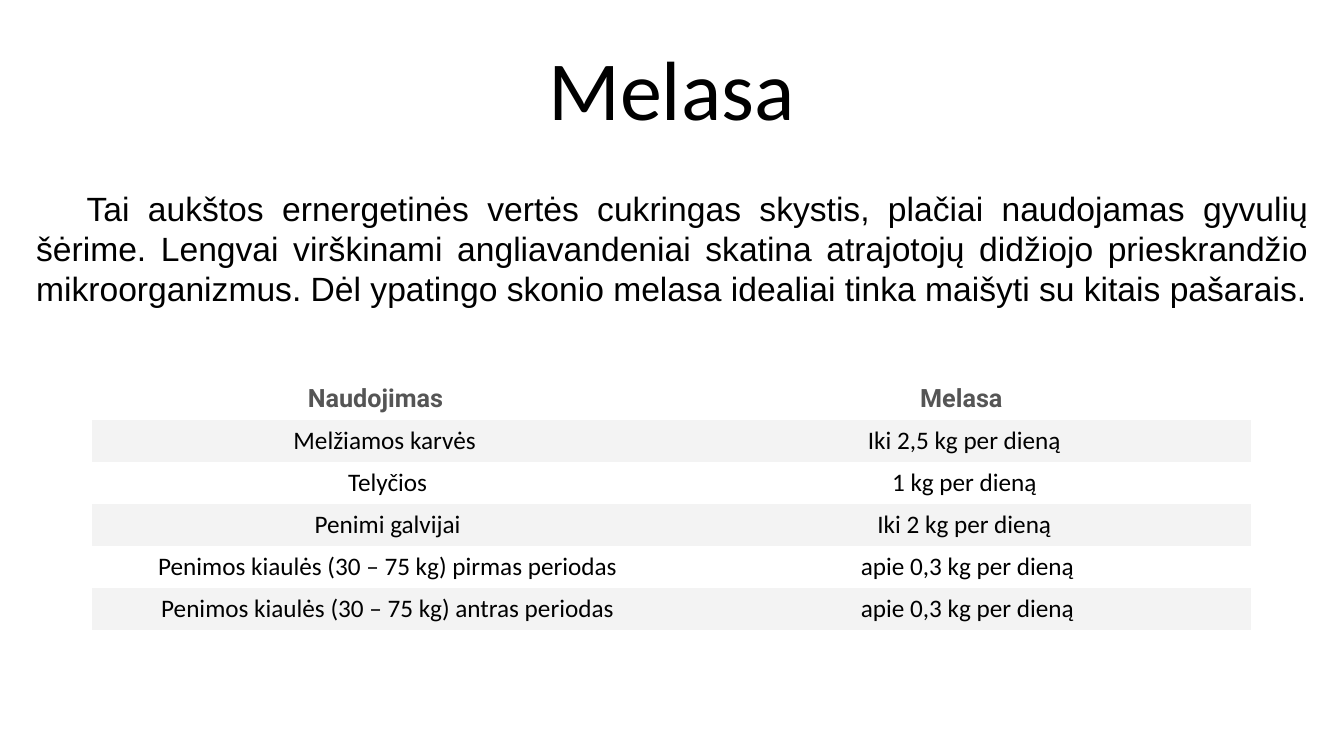
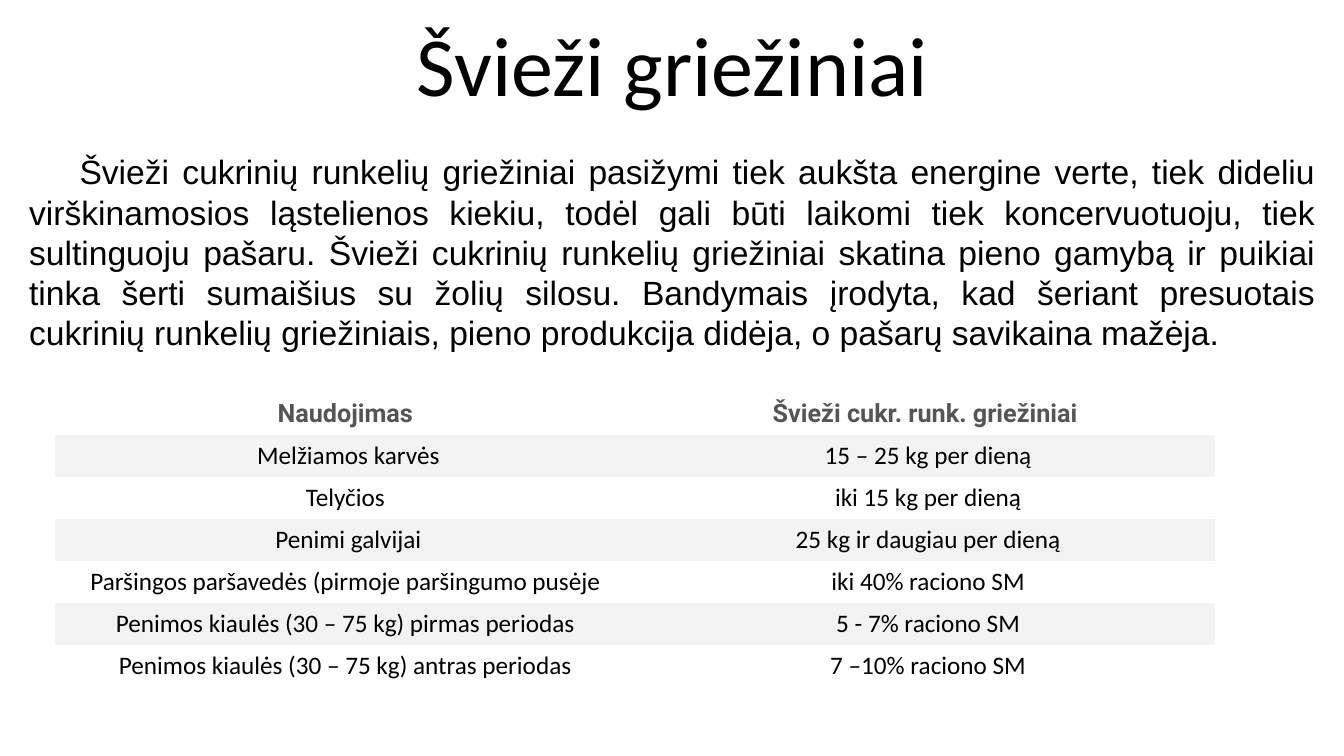
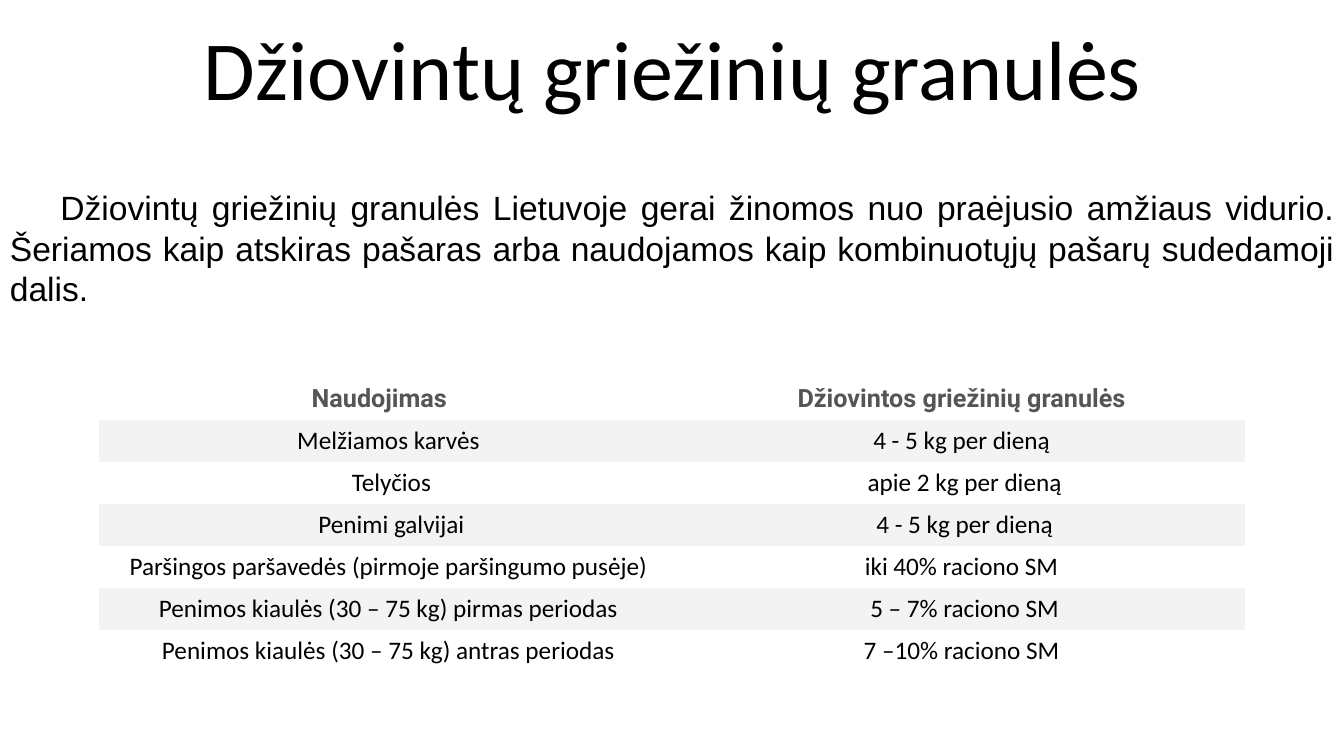
from pptx import Presentation
from pptx.dml.color import RGBColor
from pptx.enum.text import MSO_ANCHOR, PP_ALIGN
from pptx.oxml.ns import qn
from pptx.util import Inches, Pt

COLORS = {"text": "000000", "heading": "555555", "band": "F3F3F3", "plain": "FFFFFF"}
NO_GRID_STYLE = "{2D5ABB26-0587-4C30-8999-92F81FD0307C}"
ROW_HEIGHT = 2.5 / 6
INDENT_STEP = 0.06

FONTS = {
    "title": {"name": "Calibri", "size": Pt(60), "bold": False, "color": "text"},
    "body": {"name": "Arial", "size": Pt(24), "bold": False, "color": "text"},
    "heading": {"name": "Roboto", "size": Pt(18), "bold": True, "color": "heading"},
    "cell": {"name": "Calibri", "size": Pt(18), "bold": False, "color": "text"},
}
PARAGRAPHS = {
    "title": {"alignment": PP_ALIGN.CENTER, "line_spacing": 0.9},
    "body": {"alignment": PP_ALIGN.JUSTIFY, "line_spacing": 1.0, "space_before": Pt(10)},
    "heading": {"alignment": PP_ALIGN.CENTER},
    "cell": {"alignment": PP_ALIGN.CENTER},
}
ROOMY = {"margin_left": 0.08, "margin_right": 0.08, "margin_top": 0.05, "margin_bottom": 0.05}
TIGHT = dict.fromkeys(ROOMY, 0.01)

COWS, HEIFERS, CATTLE = "Melžiamos karvės", "Telyčios", "Penimi galvijai"
SOWS = "Paršingos paršavedės (pirmoje paršingumo pusėje"
PIGS_FIRST = "Penimos kiaulės (30 – 75 kg) pirmas periodas"
PIGS_SECOND = "Penimos kiaulės (30 – 75 kg) antras periodas"

FEEDS = [
    {
        "title": "Melasa",
        "title_box": (1.66, 0.31, 10, 1.11),
        "body": "Tai aukštos ernergetinės vertės cukringas skystis, plačiai naudojamas gyvulių "
                "šėrime. Lengvai virškinami angliavandeniai skatina atrajotojų didžiojo "
                "prieskrandžio mikroorganizmus. Dėl ypatingo skonio melasa idealiai tinka "
                "maišyti su kitais pašarais.",
        "body_box": (0.26, 1.81, 12.81, 3.69),
        "table_box": (0.91, 3.75, 11.5),
        "margins": ROOMY,
        "rows": [
            ("Naudojimas", "Melasa"),
            (COWS, "Iki 2,5 kg per dieną"),
            (HEIFERS, "1 kg per dieną"),
            (CATTLE, "Iki 2 kg per dieną"),
            (PIGS_FIRST, "apie 0,3 kg per dieną"),
            (PIGS_SECOND, "apie 0,3 kg per dieną"),
        ],
        "indents": [(-2, 0), (1, 1), (2, 1), (2, 1), (2, 2), (2, 2)],
    },
    {
        "title": "Švieži griežiniai",
        "title_box": (1.67, 0.2, 10, 0.99),
        "body": "Švieži cukrinių runkelių griežiniai pasižymi tiek aukšta energine verte, tiek "
                "dideliu virškinamosios ląstelienos kiekiu, todėl gali būti laikomi tiek "
                "koncervuotuoju, tiek sultinguoju pašaru. Švieži cukrinių runkelių griežiniai "
                "skatina pieno gamybą ir puikiai tinka šerti sumaišius su žolių silosu. "
                "Bandymais įrodyta, kad šeriant presuotais cukrinių runkelių griežiniais, "
                "pieno produkcija didėja, o pašarų savikaina mažėja.",
        "body_box": (0.19, 1.45, 12.95, 2.96),
        "table_box": (0.55, 3.9, 11.5),
        "margins": TIGHT,
        "rows": [
            ("Naudojimas", "Švieži cukr. runk. griežiniai"),
            (COWS, "15 – 25 kg per dieną"),
            (HEIFERS, "iki 15 kg per dieną"),
            (CATTLE, "25 kg ir daugiau per dieną"),
            (SOWS, "iki 40% raciono SM"),
            (PIGS_FIRST, "5 - 7% raciono SM"),
            (PIGS_SECOND, "7 –10% raciono SM"),
        ],
        "indents": [(0, 0), (1, 1), (0, 1), (1, 1), (0, 1), (0, 1), (0, 1)],
    },
    {
        "title": "Džiovintų griežinių granulės",
        "title_box": (1.67, 0.2, 10, 1.03),
        "body": "Džiovintų griežinių granulės Lietuvoje gerai žinomos nuo praėjusio amžiaus "
                "vidurio. Šeriamos kaip atskiras pašaras arba naudojamos kaip kombinuotųjų "
                "pašarų sudedamoji dalis.",
        "body_box": (0, 1.81, 13.33, 1.16),
        "table_box": (0.98, 3.75, 11.37),
        "margins": ROOMY,
        "rows": [
            ("Naudojimas", "Džiovintos griežinių granulės"),
            (COWS, "4 - 5 kg per dieną"),
            (HEIFERS, "apie 2 kg per dieną"),
            (CATTLE, "4 - 5 kg per dieną"),
            (SOWS + ")", "iki 40% raciono SM"),
            (PIGS_FIRST, "5 – 7% raciono SM"),
            (PIGS_SECOND, "7 –10% raciono SM"),
        ],
        "indents": [(-2, 1), (1, 1), (2, 2), (2, 2), (1, 1), (1, 2), (1, 1)],
    },
]


def color(name):
    """Return the named colour."""
    return RGBColor.from_string(COLORS[name])


def write(frame, text, style):
    """Write one paragraph in the named style."""
    paragraph = frame.paragraphs[0]
    for attribute, value in PARAGRAPHS[style].items():
        setattr(paragraph, attribute, value)
    run = paragraph.add_run()
    run.text = text
    font_format = dict(FONTS[style])
    run.font.color.rgb = color(font_format.pop("color"))
    for attribute, value in font_format.items():
        setattr(run.font, attribute, value)
    return paragraph


def add_text(slide, box, text, style, anchor):
    """Place a wrapped text box and return its paragraph."""
    frame = slide.shapes.add_textbox(*map(Inches, box)).text_frame
    frame.word_wrap = True
    frame.vertical_anchor = anchor
    return write(frame, text, style)


def add_title(slide, box, text):
    """Place the centred slide title."""
    add_text(slide, box, text, "title", MSO_ANCHOR.BOTTOM)


def add_body(slide, box, text):
    """Place the justified description with an indented first line."""
    paragraph = add_text(slide, box, text, "body", MSO_ANCHOR.TOP)
    properties = paragraph._p.get_or_add_pPr()
    properties.set("marL", "0")
    properties.set("indent", str(Inches(0.5)))


def indented(margins, steps):
    """Widen the left margin, or the right one for negative steps."""
    side = "margin_left" if steps > 0 else "margin_right"
    return {**margins, side: margins[side] + abs(steps) * INDENT_STEP}


def add_usage_table(slide, box, rows, indents, margins):
    """Place the table of feed amounts with every second row shaded."""
    left, top, width = box
    holder = slide.shapes.add_table(
        len(rows), len(rows[0]), Inches(left), Inches(top), Inches(width),
        Inches(ROW_HEIGHT * len(rows)))
    next(holder.element.iter(qn("a:tableStyleId"))).text = NO_GRID_STYLE
    usage = holder.table
    usage.first_row = usage.horz_banding = False
    for row, (texts, steps) in enumerate(zip(rows, indents)):
        for column, text in enumerate(texts):
            cell = usage.cell(row, column)
            cell.vertical_anchor = MSO_ANCHOR.MIDDLE
            for side, margin in indented(margins, steps[column]).items():
                setattr(cell, side, Inches(margin))
            cell.fill.solid()
            cell.fill.fore_color.rgb = color("band" if row % 2 else "plain")
            write(cell.text_frame, text, "cell" if row else "heading")


def add_feed_slide(deck, feed):
    """Build one slide about one feed."""
    slide = deck.slides.add_slide(deck.slide_layouts[6])
    add_title(slide, feed["title_box"], feed["title"])
    add_body(slide, feed["body_box"], feed["body"])
    add_usage_table(slide, feed["table_box"], feed["rows"], feed["indents"], feed["margins"])


def main():
    """Build and save the deck."""
    deck = Presentation()
    deck.slide_width, deck.slide_height = Inches(13.33), Inches(7.5)
    for feed in FEEDS:
        add_feed_slide(deck, feed)
    deck.save("out.pptx")


if __name__ == "__main__":
    main()
